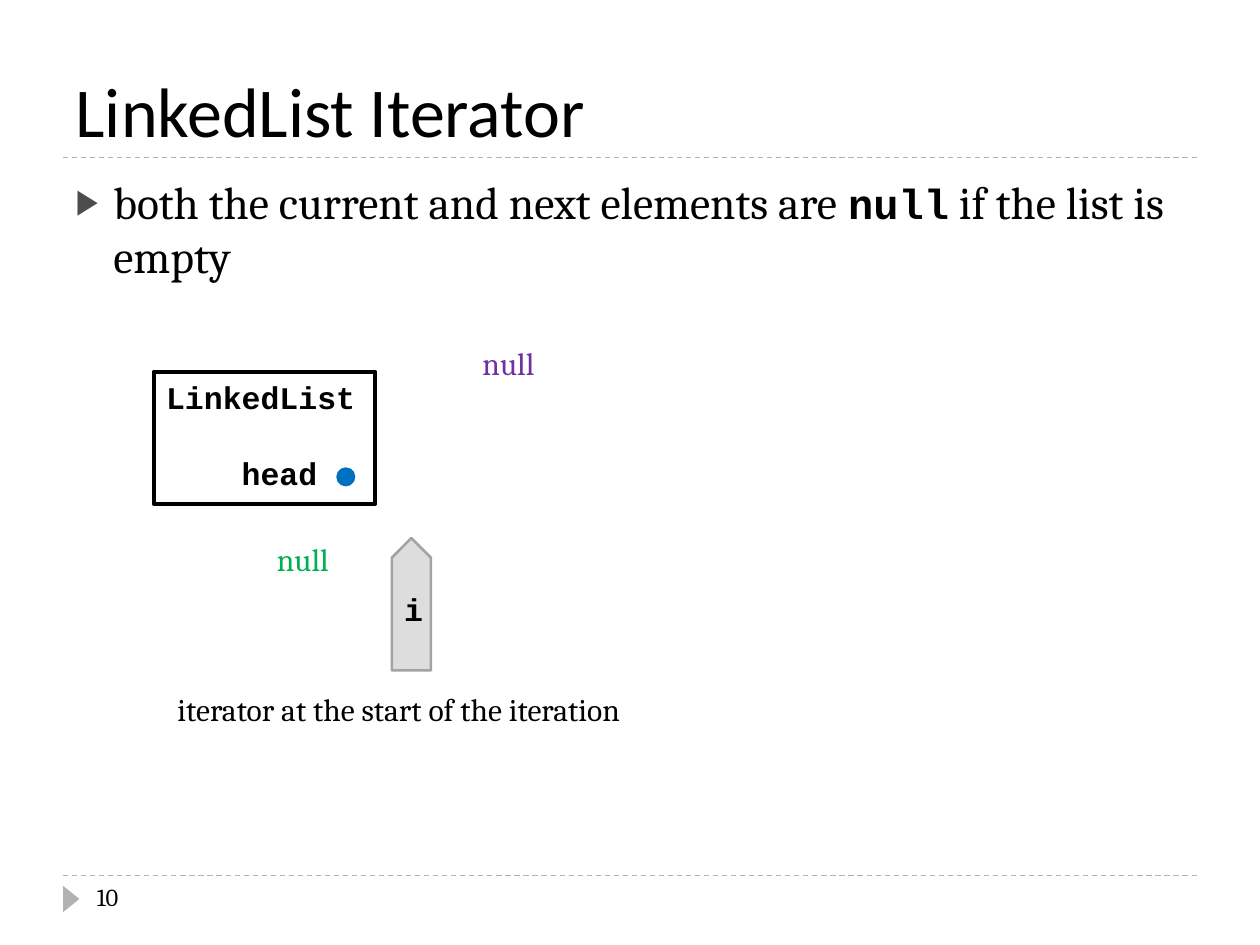
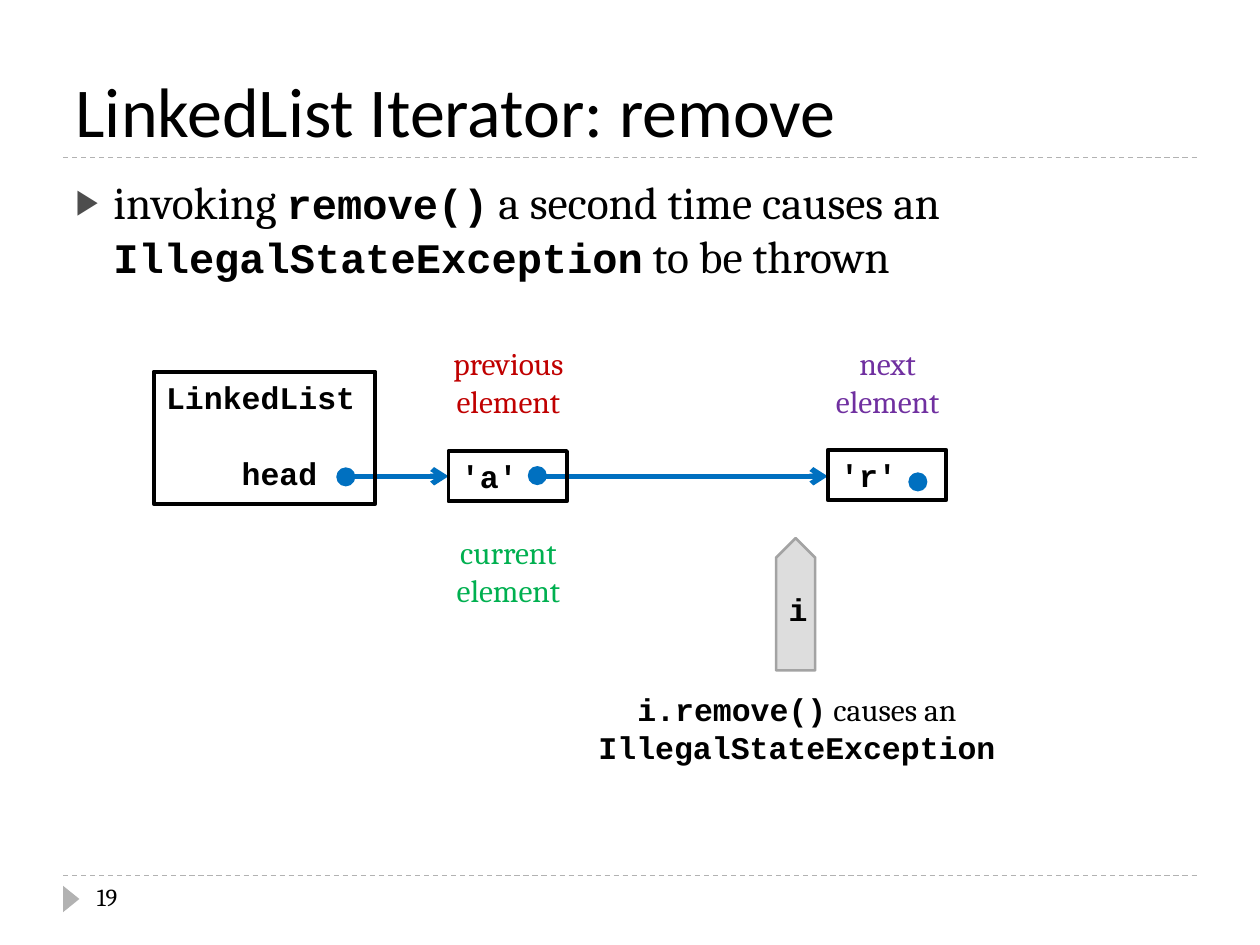
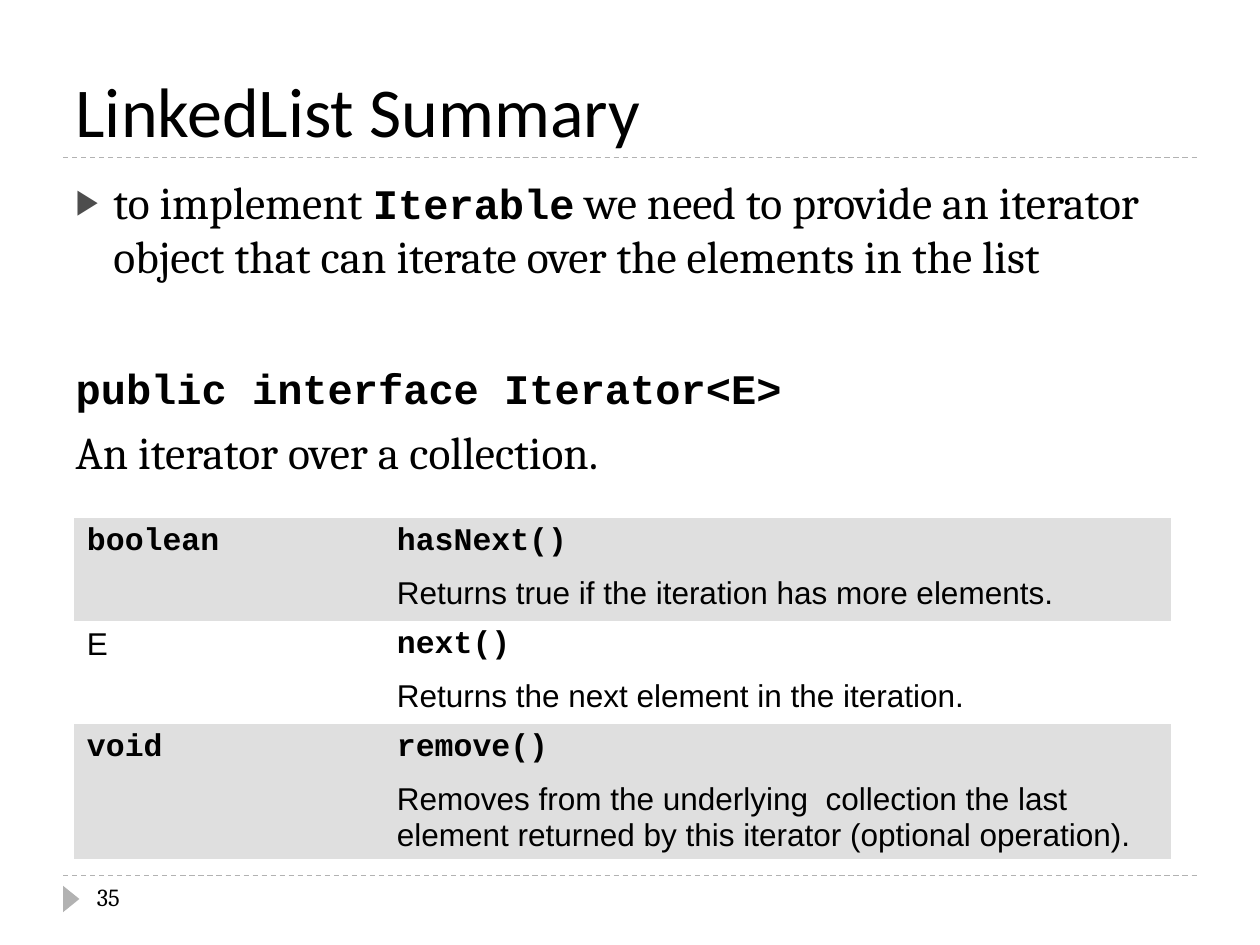
import pptx
import pptx.dml.color
import pptx.enum.dml
import pptx.enum.shapes
import pptx.enum.text
import pptx.oxml
import pptx.oxml.ns
import pptx.util

Inches = pptx.util.Inches
Pt = pptx.util.Pt
Preset = pptx.enum.shapes.MSO_SHAPE
Align = pptx.enum.text.PP_ALIGN
Anchor = pptx.enum.text.MSO_ANCHOR
AutoSize = pptx.enum.text.MSO_AUTO_SIZE

BLACK, WHITE, GREY, BLUE = "000000", "FFFFFF", "B2B2B2", "0070C0"
RED, PURPLE, GREEN, BAND = "C00000", "7030A0", "00B050", "DFDFDF"
NAMESPACE = pptx.oxml.ns.nsdecls("a")
PLAIN_TABLE = "{2D5ABB26-0587-4C30-8999-92F81FD0307C}"

STYLES = {
    "title": {"name": "Calibri", "size": Pt(40), "bold": False},
    "body": {"name": "Cambria", "size": Pt(26), "bold": False},
    "body code": {"name": "Courier New", "size": Pt(24), "bold": True},
    "label": {"name": "Cambria", "size": Pt(18), "bold": False},
    "code": {"name": "Courier New", "size": Pt(18), "bold": True},
    "cell": {"name": "Arial", "size": Pt(18), "bold": False},
    "number": {"name": "Cambria", "size": Pt(14), "bold": False},
}
BULLET = [
    '<a:buClr %s><a:srgbClr val="4D4D4D"/></a:buClr>',
    '<a:buSzPct %s val="76000"/>',
    '<a:buChar %s char="▶"/>',
]
NO_BULLET = ["<a:buNone %s/>"]


def paint(fill, color):
    if color:
        fill.solid()
        fill.fore_color.rgb = pptx.dml.color.RGBColor.from_string(color)
    else:
        fill.background()


def write(frame, lines, color=BLACK, align=Align.LEFT):
    for index, spans in enumerate(lines):
        para = frame.add_paragraph() if index else frame.paragraphs[0]
        para.alignment = align
        for text, style in spans:
            span = para.add_run()
            span.text = text
            for key, value in STYLES[style].items():
                setattr(span.font, key, value)
            paint(span.font.fill, color)


pages = [
    {
        "title": "LinkedList Iterator",
        "number": "10",
        "body": [[("both the current and next elements are ", "body"),
                  ("null", "body code"),
                  (" if the list is empty", "body")]],
        "arrows": [],
        "nodes": [],
        "dots": [(2.68, 3.72)],
        "iterator": 2.74,
        "labels": [
            (1.31, 5.43, 3.91, BLACK, Align.LEFT,
             [[("iterator at the start of the iteration", "label")]]),
            (3.72, 2.68, 0.63, PURPLE, Align.CENTER, [[("null", "label")]]),
            (2.1, 4.24, 0.63, GREEN, Align.LEFT, [[("null", "label")]]),
        ],
    },
    {
        "title": "LinkedList Iterator: remove",
        "number": "19",
        "body": [[("invoking ", "body"), ("remove()", "body code"),
                  (" a second time causes an ", "body"),
                  ("IllegalStateException", "body code"),
                  (" to be thrown", "body")]],
        "arrows": [(2.8, 3.56), (4.32, 6.57)],
        "nodes": [("'a'", 3.56, 3.58), ("'r'", 6.57, 3.57)],
        "dots": [(2.68, 3.72), (4.2, 3.71), (7.22, 3.76)],
        "iterator": 5.79,
        "labels": [
            (6.5, 2.68, 1.09, PURPLE, Align.CENTER,
             [[("next", "label")], [("element", "label")]]),
            (4.64, 5.43, 3.37, BLACK, Align.CENTER,
             [[("i.remove()", "code"), (" causes an", "label")],
              [("IllegalStateException", "code")]]),
            (3.47, 2.68, 1.13, RED, Align.CENTER,
             [[("previous", "label")], [("element", "label")]]),
            (3.49, 4.18, 1.09, GREEN, Align.CENTER,
             [[("current", "label")], [("element", "label")]]),
        ],
    },
    {
        "title": "LinkedList Summary",
        "number": "35",
        "body": [
            [("to implement ", "body"), ("Iterable", "body code"),
             (" we need to provide an iterator object that can iterate over "
              "the elements in the list", "body")],
            [("public interface Iterator<E>", "body code"), (" ", "body")],
            [("An iterator over a collection.", "body")],
        ],
        "arrows": [],
        "nodes": [],
        "dots": [],
        "iterator": None,
        "labels": [],
    },
]
methods = [
    ("boolean", "code", "hasNext()",
     "Returns true if the iteration has more elements."),
    ("E", "cell", "next()", "Returns the next element in the iteration."),
    ("void", "code", "remove()",
     "Removes from the underlying  collection the last element returned by "
     "this iterator (optional operation)."),
]

deck = pptx.Presentation()
deck.slide_width, deck.slide_height = Inches(10), Inches(7.5)

for content in pages:
    page = deck.slides.add_slide(deck.slide_layouts[1])
    title, body = page.placeholders[0], page.placeholders[1]
    for holder, top, height, anchor, lines in [
        (title, 0.17, 1.08, Anchor.BOTTOM, [[(content["title"], "title")]]),
        (body, 1.33, 5.4, Anchor.TOP, content["body"]),
    ]:
        holder.left, holder.top = Inches(0.5), Inches(top)
        holder.width, holder.height = Inches(9), Inches(height)
        holder.text_frame.auto_size = AutoSize.NONE
        holder.text_frame.vertical_anchor = anchor
        write(holder.text_frame, lines)
    for index, para in enumerate(body.text_frame.paragraphs):
        para.space_before = Pt(43.5 if index == 1 else 6)
        indent = 0 if index else Inches(0.3)
        properties = para._p.get_or_add_pPr()
        properties.set("marL", str(indent))
        properties.set("indent", str(-indent))
        for markup in NO_BULLET if index else BULLET:
            properties.append(pptx.oxml.parse_xml(markup % NAMESPACE))

    rules = [(0.5, 9.5, y, GREY, 0.75, False) for y in (6.95, 1.25)]
    arrows = [(start, end, 3.78, BLUE, 3, True)
              for start, end in content["arrows"]]
    for start, end, y, color, width, pointed in rules + arrows:
        connector = page.shapes.add_connector(
            pptx.enum.shapes.MSO_CONNECTOR.STRAIGHT,
            Inches(start), Inches(y), Inches(end), Inches(y))
        paint(connector.line.fill, color)
        connector.line.width = Pt(width)
        if pointed:
            connector.line._get_or_add_ln().append(pptx.oxml.parse_xml(
                '<a:tailEnd %s type="arrow"/>' % NAMESPACE))
        else:
            connector.line.dash_style = pptx.enum.dml.MSO_LINE.DASH
        connector._element.spPr.append(
            pptx.oxml.parse_xml("<a:effectLst %s/>" % NAMESPACE))

    shapes = [(Preset.ISOSCELES_TRIANGLE, 0.46, 7.07, 0.21, 0.13, 90,
               GREY, None, 0, [])]
    if content["iterator"]:
        shapes.append((Preset.RECTANGLE, 1.22, 2.95, 1.76, 1.05, 0,
                       None, BLACK, 2.25, ["LinkedList", "head"]))
        shapes.append((Preset.PENTAGON, content["iterator"], 4.64, 1.05, 0.31,
                       270, "DDDDDD", "A3A3A3", 1.5, ["i"]))
    for text, left, top in content["nodes"]:
        shapes.append((Preset.RECTANGLE, left, top, 0.94, 0.4, 0,
                       None, BLACK, 2.25, [text]))
    for left, top in content["dots"]:
        shapes.append((Preset.OVAL, left, top, 0.13, 0.13, 0,
                       BLUE, BLUE, 1.5, []))
    for preset, left, top, width, height, turn, fill, line, weight, words in shapes:
        shape = page.shapes.add_shape(preset, Inches(left), Inches(top),
                                      Inches(width), Inches(height))
        shape.shadow.inherit = False
        shape.rotation = turn
        paint(shape.fill, fill)
        paint(shape.line.fill, line)
        if line:
            shape.line.width = Pt(weight)
        frame = shape.text_frame
        upright = preset == Preset.PENTAGON
        frame.vertical_anchor = Anchor.MIDDLE if upright else Anchor.TOP
        write(frame, [[(word, "code")] for word in words],
              align=Align.CENTER if upright else Align.LEFT)
        if upright:
            frame._txBody.bodyPr.set("vert", "vert")
        for para in frame.paragraphs[1:]:
            para.space_before = Pt(22)
            para._p.get_or_add_pPr().set("marL", str(Inches(0.6)))

    number = (0.67, 6.95, 2.17, BLACK, Align.LEFT,
              [[(content["number"], "number")]])
    for label in [number] + content["labels"]:
        left, top, width, color, align, lines = label
        box = page.shapes.add_textbox(
            Inches(left), Inches(top), Inches(width),
            Inches(0.71 if len(lines) > 1 else 0.4))
        box.text_frame.word_wrap = label is number
        box.text_frame.auto_size = (
            AutoSize.NONE if label is number else AutoSize.SHAPE_TO_FIT_TEXT)
        write(box.text_frame, lines, color, align)

holder = page.shapes.add_table(len(methods) * 2, 2, Inches(0.59), Inches(4.11),
                               Inches(8.7), Inches(2.7))
holder._element.find(".//{*}tableStyleId").text = PLAIN_TABLE
table = holder.table
table.first_row = table.horz_banding = False
for column, width in zip(table.columns, (2.46, 6.24)):
    column.width = Inches(width)
for index, row in enumerate(table.rows):
    row.height = Inches(0.65 if index == 5 else 0.41)
    for cell in row.cells:
        paint(cell.fill, WHITE if index // 2 == 1 else BAND)
for index, (kind, style, call, meaning) in enumerate(methods):
    write(table.cell(index * 2, 0).text_frame, [[(kind, style)]])
    write(table.cell(index * 2, 1).text_frame, [[(call, "code")]])
    write(table.cell(index * 2 + 1, 1).text_frame, [[(meaning, "cell")]])

deck.save("out.pptx")
